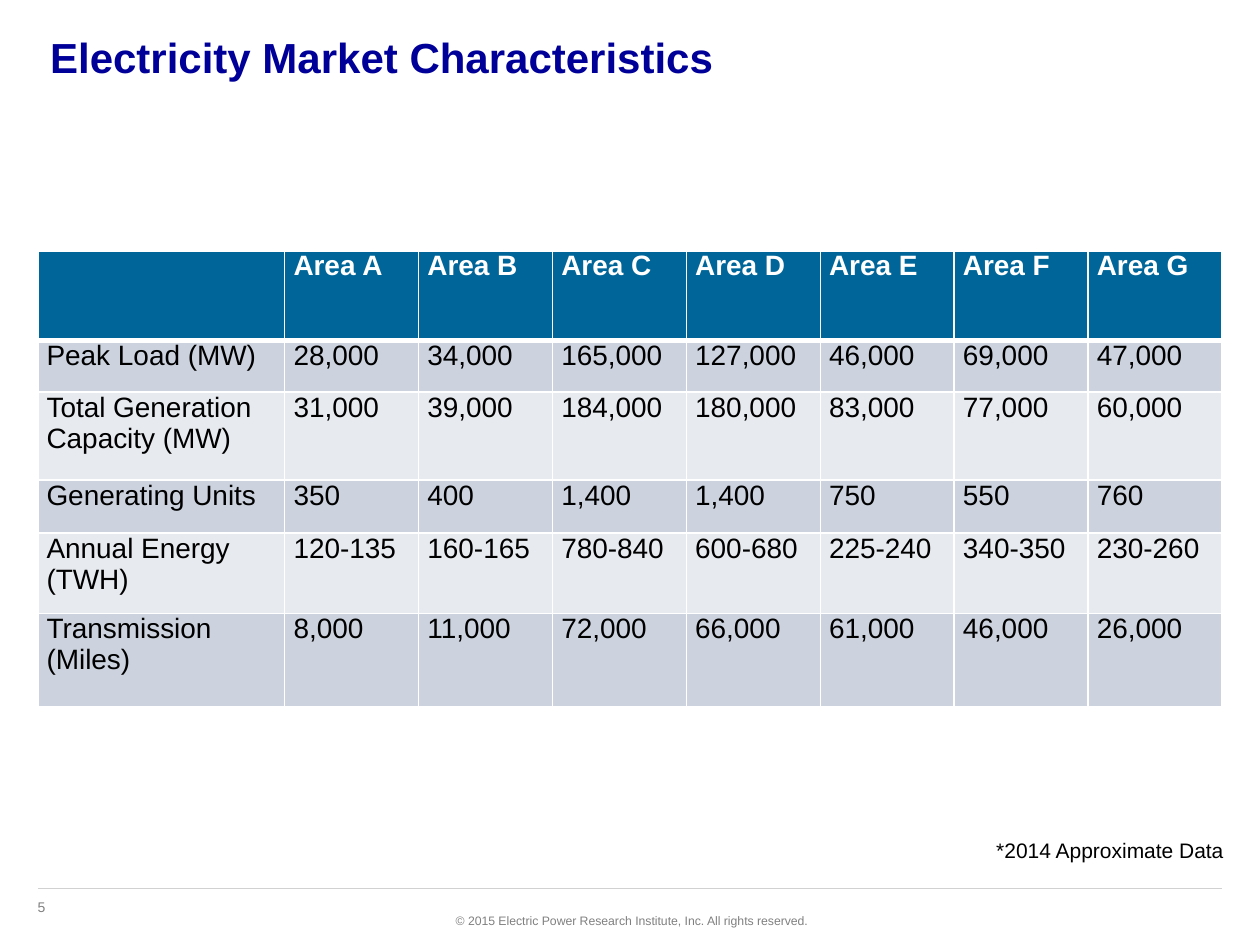
from lxml.etree import SubElement
from pptx import Presentation
from pptx.dml.color import RGBColor
from pptx.enum.shapes import MSO_CONNECTOR
from pptx.enum.text import MSO_ANCHOR, PP_ALIGN
from pptx.oxml.ns import qn
from pptx.util import Inches, Pt

WIDTH, HEIGHT = 10, 7.5
MARGIN = 0.03 * WIDTH
CONTENT_WIDTH = WIDTH - 2 * MARGIN
LABEL_WIDTH = 1.96
ROW_HEIGHTS = [0.71, 0.41, 0.7, 0.42, 0.64, 0.74]
HEADER_FILL = "006699"
BAND_FILLS = ["E7EAEF", "CCD3DE"]
MARKETS = [
    ["", "Area A", "Area B", "Area C", "Area D", "Area E", "Area F", "Area G"],
    ["Peak Load (MW)", "28,000", "34,000", "165,000", "127,000", "46,000", "69,000", "47,000"],
    ["Total Generation Capacity (MW)", "31,000", "39,000", "184,000", "180,000", "83,000", "77,000", "60,000"],
    ["Generating Units", "350", "400", "1,400", "1,400", "750", "550", "760"],
    ["Annual Energy (TWH)", "120-135", "160-165", "780-840", "600-680", "225-240", "340-350", "230-260"],
    ["Transmission (Miles)", "8,000", "11,000", "72,000", "66,000", "61,000", "46,000", "26,000"],
]


def rgb(value):
    return RGBColor.from_string(value)


def style_paragraph(p, size, color, bold=False, align=PP_ALIGN.LEFT):
    p.alignment = align
    p.font.name = "Arial"
    p.font.size = Pt(size)
    p.font.bold = bold
    p.font.color.rgb = rgb(color)


def add_text(s, text, box, size, color, bold=False, align=PP_ALIGN.LEFT, wrap=True):
    tf = s.shapes.add_textbox(*map(Inches, box)).text_frame
    tf.word_wrap = wrap
    tf.vertical_anchor = MSO_ANCHOR.TOP
    tf.text = text
    style_paragraph(tf.paragraphs[0], size, color, bold, align)


def add_rule(s, y, color, width):
    line = s.shapes.add_connector(
        MSO_CONNECTOR.STRAIGHT, Inches(MARGIN), Inches(y), Inches(WIDTH - MARGIN), Inches(y)
    )
    line.line.color.rgb = rgb(color)
    line.line.width = Pt(width)
    SubElement(line._element.spPr, qn("a:effectLst"))


def set_borders(cell, color, top, bottom):
    tcPr = cell._tc.get_or_add_tcPr()
    for side, width in (("L", 1), ("R", 1), ("T", top), ("B", bottom)):
        ln = SubElement(tcPr, qn(f"a:ln{side}"), w=str(Pt(width)))
        SubElement(SubElement(ln, qn("a:solidFill")), qn("a:srgbClr"), val=color)


def fill_cell(cell, text, row):
    header = row == 0
    set_borders(cell, "FFFFFF", 3 if row == 1 else 1, 3 if header else 1)
    cell.fill.solid()
    cell.fill.fore_color.rgb = rgb(HEADER_FILL if header else BAND_FILLS[row % 2])
    cell.margin_left = cell.margin_right = Inches(0.07)
    cell.margin_top = cell.margin_bottom = 0
    cell.text = text
    style_paragraph(cell.text_frame.paragraphs[0], 16, "FFFFFF" if header else "000000", header)


def add_market_table(s, top):
    columns = len(MARKETS[0])
    box = (MARGIN, top, CONTENT_WIDTH, sum(ROW_HEIGHTS))
    table = s.shapes.add_table(len(MARKETS), columns, *map(Inches, box)).table
    for i, column in enumerate(table.columns):
        column.width = Inches((CONTENT_WIDTH - LABEL_WIDTH) / (columns - 1) if i else LABEL_WIDTH)
    for i, (height, values) in enumerate(zip(ROW_HEIGHTS, MARKETS)):
        table.rows[i].height = Inches(height)
        for j, value in enumerate(values):
            fill_cell(table.cell(i, j), value, i)


def main():
    prs = Presentation()
    prs.slide_width, prs.slide_height = Inches(WIDTH), Inches(HEIGHT)
    s = prs.slides.add_slide(prs.slide_layouts[6])
    add_text(s, "5", (0.2, 7.08, 0.66, 0.24), 8, "808080")
    add_rule(s, 0.94 * HEIGHT, "D1D1D1", 0.75)
    add_text(s, "© 2015 Electric Power Research Institute, Inc. All rights reserved.",
             (3.49, 7.2, 3.02, 0.22), 7, "808080", align=PP_ALIGN.RIGHT, wrap=False)
    add_text(s, "Electricity Market Characteristics",
             (MARGIN, 0.2, CONTENT_WIDTH, 0.8), 24, "000099", bold=True)
    add_market_table(s, 1.99)
    add_text(s, "*2014 Approximate Data", (7.8, 6.6, 2.02, 0.3), 12, "000000",
             align=PP_ALIGN.CENTER, wrap=False)
    prs.save("out.pptx")


if __name__ == "__main__":
    main()
